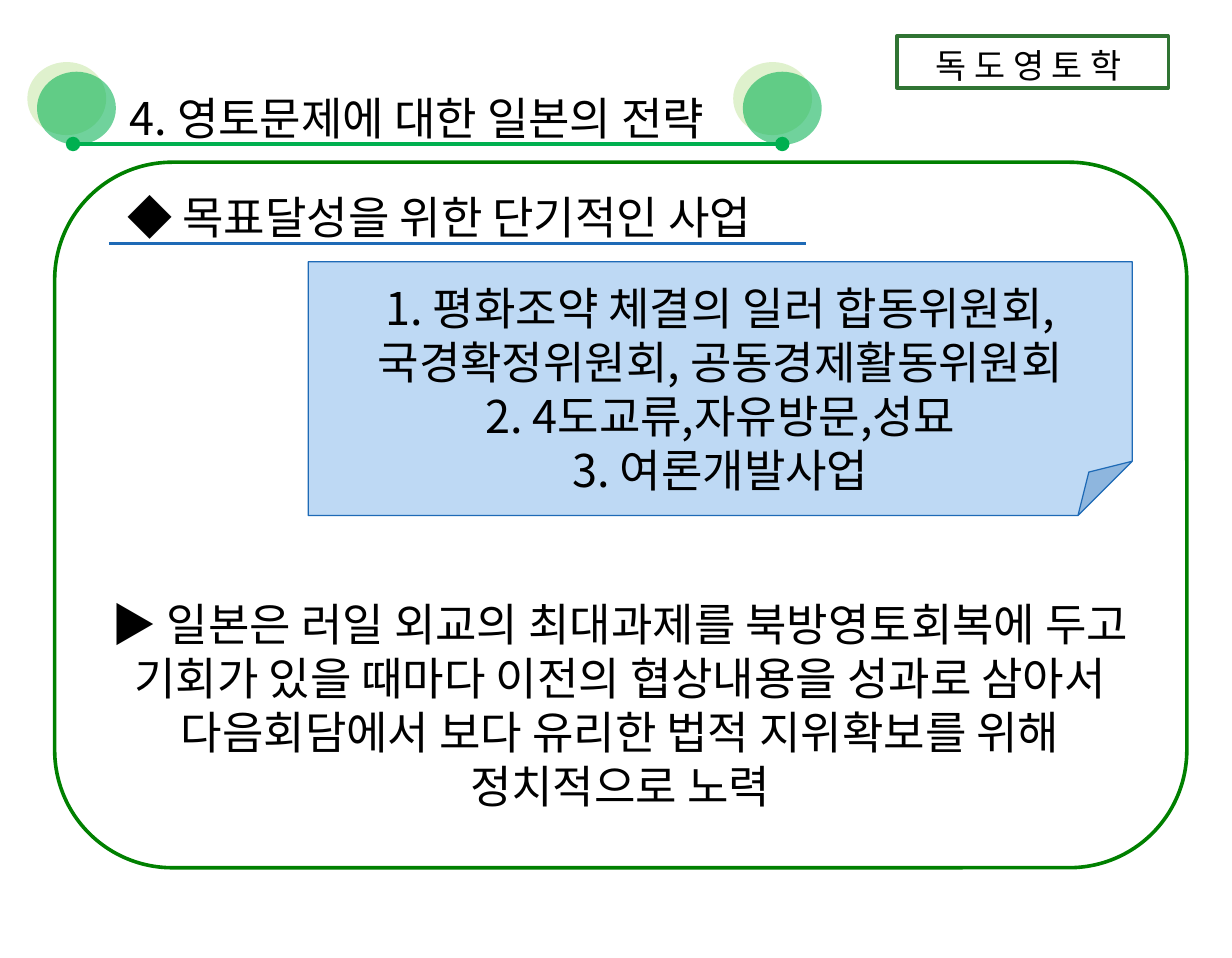
"""Build the slide on strategy in territorial disputes."""
from lxml import etree
from pptx import Presentation
from pptx import util as u
from pptx.dml import color
from pptx.enum import shapes, text
from pptx.oxml import ns

FONT = "Noto Sans CJK KR"
LEFT, CENTER = text.PP_ALIGN.LEFT, text.PP_ALIGN.CENTER
KIND = shapes.MSO_SHAPE

TITLE = ["4. 영토문제에 대한 일본의 전략"]
COURSE = ["독 도 영 토 학 "]
HEADING = ["◆ 목표달성을 위한 단기적인 사업"]
PROJECTS = [
    "1. 평화조약 체결의 일러 합동위원회,",
    "국경확정위원회, 공동경제활동위원회",
    "2. 4도교류,자유방문,성묘",
    "3. 여론개발사업",
]
CONCLUSION = [
    "▶ 일본은 러일 외교의 최대과제를 북방영토회복에 두고 "
    "기회가 있을 때마다 이전의 협상내용을 성과로 삼아서 "
    "다음회담에서 보다 유리한 법적 지위확보를 위해 정치적으로 노력"
]
TEXTS = [
    (TITLE, (73.4, 50.4, 388, 41), LEFT),
    (HEADING, (56.2, 112.3, 433.4, 41), CENTER),
    (PROJECTS, (191.5, 168.5, 512, 143.3), CENTER),
    (CONCLUSION, (56.2, 365, 658, 143.3), CENTER),
]
DISC_LEFTS = [23, 461.5]


def rgb(value):
    return color.RGBColor.from_string(value)


def points(values):
    return [u.Pt(value) for value in values]


def add_xml(parent, tag, **attributes):
    return etree.SubElement(parent, ns.qn(tag), attributes)


def set_line(line, value, width):
    line.color.rgb = rgb(value)
    line.width = u.Pt(width)


def add_shape(page, kind, place, fill=None, opacity=100, line=None):
    shape = page.shapes.add_shape(kind, *points(place))
    shape.shadow.inherit = False
    if fill:
        shape.fill.solid()
        shape.fill.fore_color.rgb = rgb(fill)
        if opacity < 100:
            tint = shape._element.spPr.find(".//" + ns.qn("a:srgbClr"))
            add_xml(tint, "a:alpha", val=str(opacity * 1000))
    else:
        shape.fill.background()
    if line:
        set_line(shape.line, *line)
    else:
        shape.line.fill.background()
    return shape


def add_disc(page, left):
    disc = add_shape(page, KIND.OVAL, (left, 44.6, 49, 45.4), "00B050", 56)
    effects = disc._element.spPr.find(ns.qn("a:effectLst"))
    shadow = add_xml(effects, "a:outerShdw", dist=str(u.Pt(8.5)),
                     dir=str(225 * 60000), algn="ctr", rotWithShape="0")
    tint = add_xml(shadow, "a:srgbClr", val="92D050")
    add_xml(tint, "a:alpha", val="50000")


def add_note(page):
    note = add_shape(page, KIND.FOLDED_CORNER, (191.5, 162.7, 512, 157.7),
                     "3B8DDF", 33, ("1E6AB6", 0.75))
    guides = note._element.spPr.find(".//" + ns.qn("a:avLst"))
    add_xml(guides, "a:gd", name="adj", fmla="val 21400")


def add_rule(page, start, end, top, value, width, dots=False):
    rule = page.shapes.add_connector(
        shapes.MSO_CONNECTOR.STRAIGHT, *points((start, top, end, top)))
    set_line(rule.line, value, width)
    if dots:
        outline = rule._element.spPr.find(ns.qn("a:ln"))
        add_xml(outline, "a:headEnd", type="oval")
        add_xml(outline, "a:tailEnd", type="oval")
    add_xml(rule._element.spPr, "a:effectLst")


def write(box, lines, size, align):
    frame = box.text_frame
    frame.word_wrap = True
    frame.vertical_anchor = text.MSO_ANCHOR.TOP
    frame.margin_top, frame.margin_bottom = points((5.6, 1.6))
    frame.text = "\n".join(lines)
    for para in frame.paragraphs:
        para.alignment = align
        para.line_spacing = u.Pt(size * 1.2)
        for span in para.runs:
            span.font.size = u.Pt(size)
            span.font.name = FONT
            span.font.color.rgb = rgb("000000")
            add_xml(span.font._element, "a:ea", typeface=FONT)


def main():
    deck = Presentation()
    deck.slide_width, deck.slide_height = points((765.4, 595.4))
    page = deck.slides.add_slide(deck.slide_layouts[6])
    for left in DISC_LEFTS:
        add_disc(page, left)
    add_rule(page, 45.4, 486, 89.5, "00B050", 3, dots=True)
    add_shape(page, KIND.ROUNDED_RECTANGLE, (34, 100.8, 703.4, 438.5),
              line=("008000", 2.25))
    course = add_shape(page, KIND.RECTANGLE, (557.3, 22.3, 168.5, 32.4),
                       "FFFFFF", line=("307433", 2))
    write(course, COURSE, 21, CENTER)
    add_rule(page, 67.7, 501, 151.2, "1E6AB6", 2)
    add_note(page)
    for lines, place, align in TEXTS:
        write(page.shapes.add_textbox(*points(place)), lines, 28, align)
    deck.save("out.pptx")


if __name__ == "__main__":
    main()
